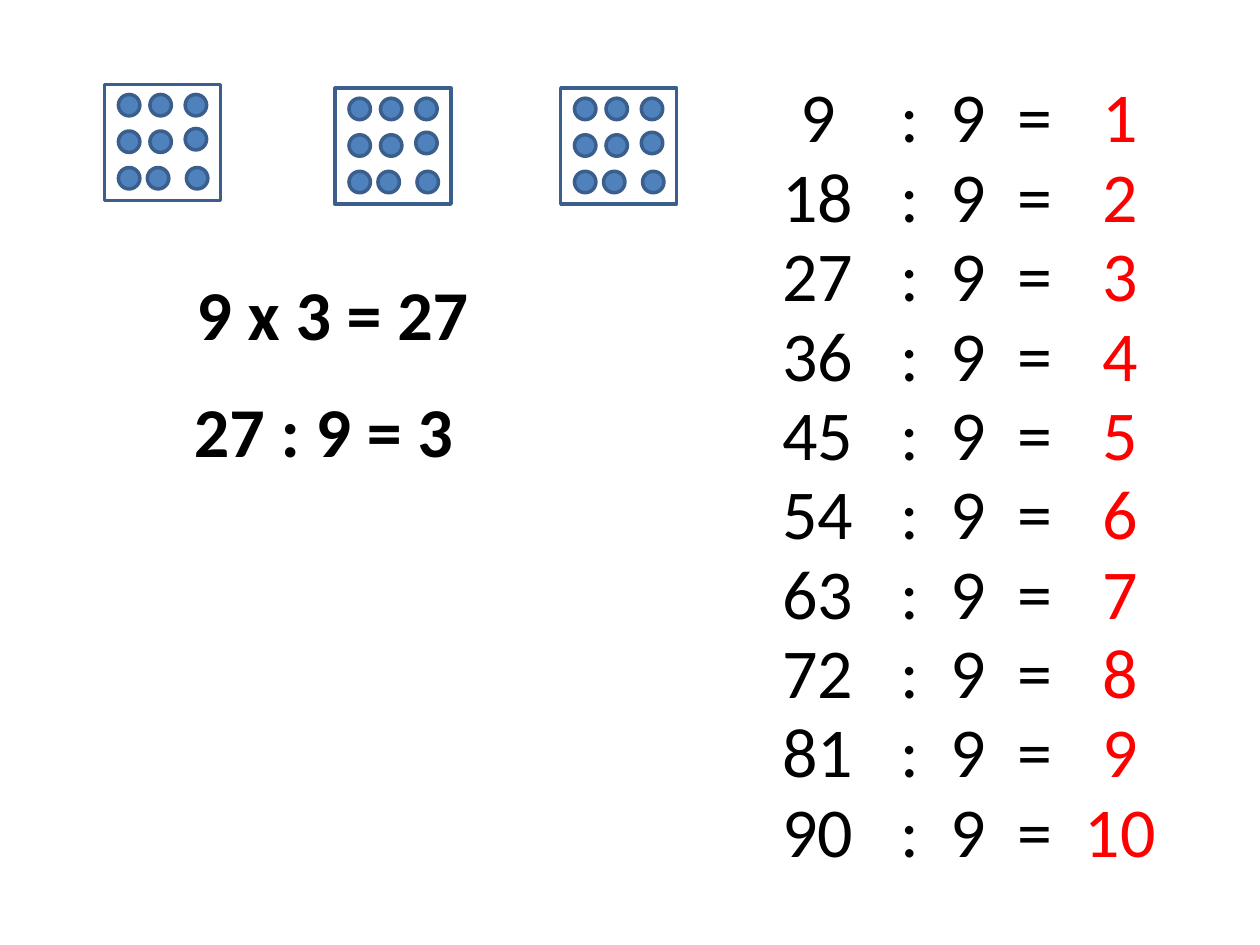
from pptx import Presentation
from pptx.dml.color import RGBColor
from pptx.enum.shapes import MSO_SHAPE
from pptx.enum.text import MSO_AUTO_SIZE, PP_ALIGN
from pptx.util import Inches, Pt

RECT, OVAL = MSO_SHAPE.RECTANGLE, MSO_SHAPE.OVAL
LEFT, MID = PP_ALIGN.LEFT, PP_ALIGN.CENTER
GROW = MSO_AUTO_SIZE.SHAPE_TO_FIT_TEXT
COLS, ROWS = 100, 75


def color(code):
    return RGBColor.from_string(code)


def write(frame, text, size=40, font="Calibri", ink="000000", bold=False, align=LEFT):
    para = frame.paragraphs[0]
    para.alignment = align
    run = para.add_run()
    run.text = text
    run.font.size = Pt(size)
    run.font.name = font
    run.font.bold = bold
    run.font.color.rgb = color(ink)


class Page:
    edge, dot, paper, red = "3A5F8C", "4F81BD", "FFFFFF", "FF0000"

    def __init__(self, deck):
        self.slide = deck.slides.add_slide(deck.slide_layouts[6])
        self.col = deck.slide_width / COLS
        self.row = deck.slide_height / ROWS

    def area(self, x, y, w, h):
        return [round(n) for n in (x * self.col, y * self.row, w * self.col, h * self.row)]

    def text(self, text, x, y, w, **style):
        box = self.slide.shapes.add_textbox(*self.area(x, y, w, 7.7))
        box.text_frame.word_wrap = True
        box.text_frame.auto_size = GROW
        write(box.text_frame, text, **style)

    def shape(self, group, kind, x, y, size, fill):
        item = group.shapes.add_shape(kind, *self.area(x, y, size, size))
        item.shadow.inherit = False
        item.fill.solid()
        item.fill.fore_color.rgb = color(fill)
        item.line.color.rgb = color(self.edge)
        item.line.width = Pt(2)

    def card(self, x, y):
        group = self.slide.shapes.add_group_shape()
        self.shape(group, RECT, x, y, 9.2, self.paper)
        for dx, dy in DOTS:
            self.shape(group, OVAL, x + dx, y + dy, 1.7, self.dot)


DOTS = [
    (1.1, 0.8), (3.6, 0.8), (6.4, 0.8),
    (1.1, 3.7), (3.6, 3.7), (6.4, 3.5),
    (1.1, 6.6), (3.4, 6.6), (6.5, 6.6),
]
CARDS = [(8.3, 6.7), (26.6, 7), (44.5, 7)]


def main():
    deck = Presentation()
    deck.slide_width, deck.slide_height = Inches(10), Inches(7.5)
    page = Page(deck)
    page.text("9 x 3 = 27", 14.6, 21, 24.5, bold=True)
    page.text("27 : 9 = 3", 14.4, 30.3, 24.5, bold=True)
    for n in range(1, 11):
        y = 5.3 + 6.3 * (n - 1)
        page.text(str(9 * n), 61, y, 7.8, align=MID)
        page.text(":  9  =", 70.5, y, 15)
        page.text(str(n), 85, y, 7.8, ink=page.red, align=MID)
    for x, y in CARDS:
        page.card(x, y)
    deck.save("out.pptx")


if __name__ == "__main__":
    main()
